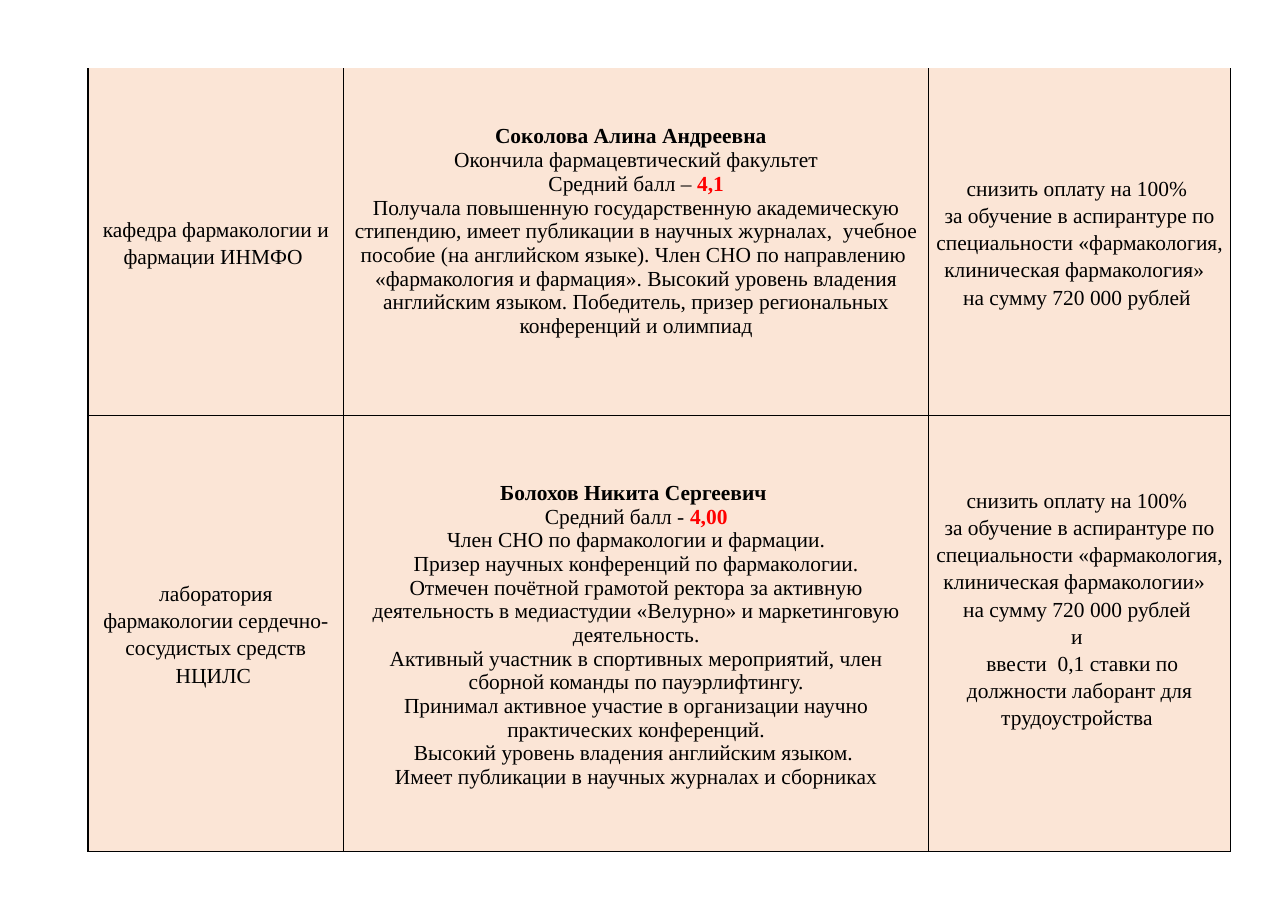
from lxml import etree
from pptx import Presentation
from pptx.dml.color import RGBColor
from pptx.enum import text as txt
from pptx.oxml import ns
from pptx.util import Inches, Pt

BLACK = RGBColor(0x00, 0x00, 0x00)
RED = RGBColor(0xFF, 0x00, 0x00)
PEACH = RGBColor(0xFB, 0xE5, 0xD6)
FONT = "Times New Roman"
LOOSE = 1.15

AWARDS = [
    {
        "department": "кафедра фармакологии и фармации ИНМФО ",
        "name": "Соколова Алина Андреевна  ",
        "merits": [
            "Окончила фармацевтический факультет",
            ("Средний балл – ", "4,1"),
            "Получала повышенную государственную академическую стипендию, "
            "имеет публикации в научных журналах,  учебное пособие (на английском языке). "
            "Член СНО по направлению  «фармакология и фармация». "
            "Высокий уровень владения английским языком. "
            "Победитель, призер региональных конференций и олимпиад",
        ],
        "support": [
            "снизить оплату на 100% ",
            "за обучение в аспирантуре по специальности «фармакология, "
            "клиническая фармакология»  ",
            "на сумму 720 000 рублей ",
        ],
        "height": 3.15,
        "bottoms": (0, 0.22, 0),
        "sides": "LRB",
    },
    {
        "department": "лаборатория фармакологии сердечно-сосудистых средств НЦИЛС ",
        "name": "Болохов Никита Сергеевич ",
        "merits": [
            ("Средний балл - ", "4,00"),
            "Член СНО по фармакологии и фармации.",
            "Призер научных конференций по фармакологии.",
            "Отмечен почётной грамотой ректора за активную деятельность "
            "в медиастудии «Велурно» и маркетинговую деятельность.",
            "Активный участник в спортивных мероприятий, "
            "член сборной команды по пауэрлифтингу.",
            "Принимал активное участие в организации научно практических конференций.",
            "Высокий уровень владения английским языком. ",
            "Имеет публикации в научных журналах и сборниках",
        ],
        "support": [
            "снизить оплату на 100% ",
            "за обучение в аспирантуре по специальности «фармакология, "
            "клиническая фармакологии»  ",
            "на сумму 720 000 рублей ",
            "и ",
            " ввести  0,1 ставки по должности лаборант для трудоустройства ",
        ],
        "height": 3.96,
        "bottoms": (0, 0, 0.46),
        "sides": "LRTB",
    },
]
WIDTHS = [2.32, 5.31, 2.74]
LEFT, TOP = 0.8, 0.62


def write(paragraph, text, bold=False, color=BLACK, spacing=None):
    paragraph.alignment = txt.PP_ALIGN.CENTER
    if spacing:
        paragraph.line_spacing = spacing
    run = paragraph.add_run()
    run.text = text
    run.font.name = FONT
    run.font.size = Pt(14)
    run.font.bold = bold
    run.font.color.rgb = color


def draw_borders(cell, sides):
    properties = cell._tc.get_or_add_tcPr()
    for side in "LRTB":
        border = etree.SubElement(properties, ns.qn(f"a:ln{side}"), w=str(Pt(1)))
        if side in sides:
            fill = etree.SubElement(border, ns.qn("a:solidFill"))
            etree.SubElement(fill, ns.qn("a:srgbClr"), val=str(BLACK))
        else:
            etree.SubElement(border, ns.qn("a:noFill"))


def fill_cell(cell, lines, bottom, sides):
    cell.vertical_anchor = txt.MSO_ANCHOR.MIDDLE
    cell.margin_left = cell.margin_right = Inches(0.05)
    cell.margin_top, cell.margin_bottom = Inches(0), Inches(bottom)
    draw_borders(cell, sides)
    cell.fill.solid()
    cell.fill.fore_color.rgb = PEACH
    for index, (line, style) in enumerate(lines):
        frame = cell.text_frame
        paragraph = frame.add_paragraph() if index else frame.paragraphs[0]
        if isinstance(line, tuple):
            label, score = line
            write(paragraph, label, **style)
            write(paragraph, score, bold=True, color=RED)
        else:
            write(paragraph, line, **style)


def main():
    deck = Presentation()
    deck.slide_width, deck.slide_height = Inches(11.69), Inches(8.27)
    slide = deck.slides.add_slide(deck.slide_layouts[6])
    height = sum(award["height"] for award in AWARDS)
    awards = slide.shapes.add_table(
        len(AWARDS), len(WIDTHS), Inches(LEFT), Inches(TOP),
        Inches(sum(WIDTHS)), Inches(height),
    ).table
    awards.first_row = awards.horz_banding = False
    for column, width in zip(awards.columns, WIDTHS):
        column.width = Inches(width)

    loose = {"spacing": LOOSE}
    for row, award in zip(awards.rows, AWARDS):
        row.height = Inches(award["height"])
        department = [(award["department"], loose)]
        student = [(award["name"], {"bold": True, "spacing": LOOSE})]
        student += [(merit, {}) for merit in award["merits"]]
        support = [(line, loose) for line in award["support"]]
        columns = (department, student, support)
        for cell, lines, bottom in zip(row.cells, columns, award["bottoms"]):
            fill_cell(cell, lines, bottom, award["sides"])
    deck.save("out.pptx")


if __name__ == "__main__":
    main()
